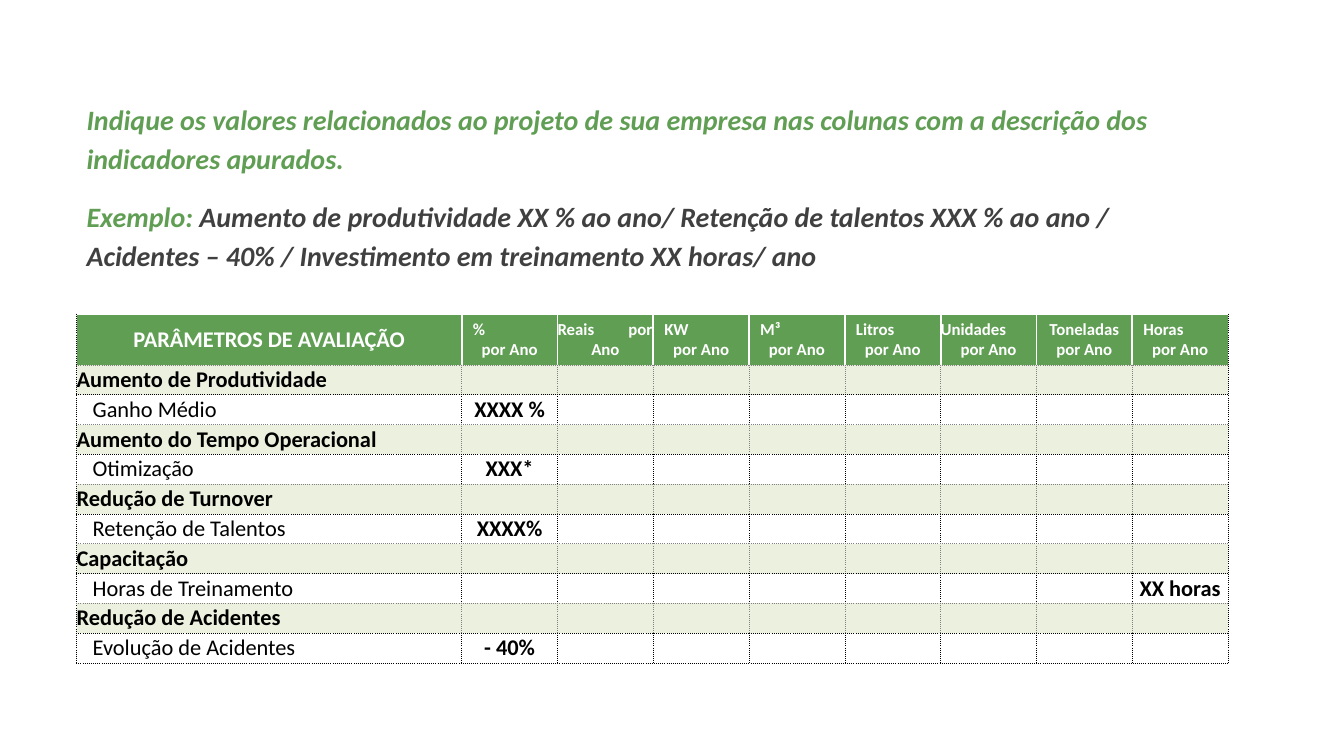
from dataclasses import dataclass

from lxml import etree
from pptx import Presentation
from pptx.dml.color import RGBColor
from pptx.enum.text import MSO_ANCHOR, PP_ALIGN
from pptx.oxml.ns import qn
from pptx.util import Inches, Pt

LEFT, CENTER = PP_ALIGN.LEFT, PP_ALIGN.CENTER
MIDDLE = MSO_ANCHOR.MIDDLE


@dataclass(frozen=True)
class Theme:
    font: str = "Calibri"
    green: str = "609E54"
    pale: str = "EBF1DE"
    white: str = "FFFFFF"
    black: str = "000000"
    gray: str = "808080"
    dark: str = "404040"
    intro: int = 20
    body: int = 16
    unit: int = 12


@dataclass(frozen=True)
class Edge:
    color: str
    width: float = 0.5
    dash: str = "dot"


@dataclass(frozen=True)
class Unit:
    first: str
    second: str = "por Ano"
    indent: float = 0.11
    align: PP_ALIGN = LEFT


@dataclass(frozen=True)
class Parameter:
    section: str
    item: str
    value: str
    col: int = 1


T = Theme()
WHITE_EDGE = Edge(T.white, 1.5, "solid")
BLACK_EDGE, GRAY_EDGE = Edge(T.black), Edge(T.gray)

X, WIDTH = 0.76, 11.42
TABLE_Y, TABLE_H, HEADER_H = 3.12, 3.46, 0.5
UNIT_W = 0.95
HEADING = "PARÂMETROS DE AVALIAÇÃO"
UNITS = [
    Unit("%"),
    Unit("Reais\tpor", "Ano", 0),
    Unit("KW"),
    Unit("M³"),
    Unit("Litros"),
    Unit("Unidades", indent=0),
    Unit("Toneladas", indent=0, align=CENTER),
    Unit("Horas"),
]
PARAMETERS = [
    Parameter("Aumento de Produtividade", "Ganho Médio", "XXXX %"),
    Parameter("Aumento do Tempo Operacional", "Otimização", "XXX*"),
    Parameter("Redução de Turnover", "Retenção de Talentos", "XXXX%"),
    Parameter("Capacitação", "Horas de Treinamento", "XX horas", len(UNITS)),
    Parameter("Redução de Acidentes", "Evolução de Acidentes", "- 40%"),
]
INTRO = [
    [("Indique os valores relacionados ao projeto de sua empresa nas colunas "
      "com a descrição dos indicadores apurados.", T.green)],
    [("Exemplo: ", T.green),
     ("Aumento de produtividade XX % ao ano/ Retenção de talentos XXX % ao ano / "
      "Acidentes – 40% / Investimento em treinamento XX horas/ ano", T.dark)],
]
ROWS, COLS = 1 + 2 * len(PARAMETERS), 1 + len(UNITS)


def add_run(p, text: str, size: int, color: str, bold: bool = True, italic: bool = False) -> None:
    r = p.add_run()
    r.text = text
    for name, value in {"name": T.font, "size": Pt(size), "bold": bold, "italic": italic}.items():
        setattr(r.font, name, value)
    r.font.color.rgb = RGBColor.from_string(color)


def add_intro(s) -> None:
    tf = s.shapes.add_textbox(Inches(X), Inches(0.92), Inches(WIDTH), Inches(1.81)).text_frame
    tf.word_wrap = True
    for i, runs in enumerate(INTRO):
        p = tf.add_paragraph() if i else tf.paragraphs[0]
        p.line_spacing, p.space_after = 1.15, Pt(4)
        p.space_before = Pt(10 if i else 0)
        for text, color in runs:
            add_run(p, text, T.intro, color, italic=True)


def row_edge(row: int) -> Edge:
    if row == 0:
        return WHITE_EDGE
    return GRAY_EDGE if row % 2 and row < ROWS else BLACK_EDGE


def col_edge(row: int, col: int) -> Edge:
    if col in (0, COLS):
        return BLACK_EDGE
    if row == 0:
        return WHITE_EDGE
    return GRAY_EDGE if row % 2 else BLACK_EDGE


def set_borders(cell, edges: list[Edge]) -> None:
    tc_pr = cell._tc.get_or_add_tcPr()
    for i, (side, edge) in enumerate(zip("LRTB", edges)):
        ln = etree.Element(qn(f"a:ln{side}"), w=str(Pt(edge.width)))
        fill = etree.SubElement(ln, qn("a:solidFill"))
        etree.SubElement(fill, qn("a:srgbClr"), val=edge.color)
        etree.SubElement(ln, qn("a:prstDash"), val=edge.dash)
        tc_pr.insert(i, ln)


def format_cell(cell, row: int, col: int) -> None:
    margins = dict.fromkeys(("margin_left", "margin_right", "margin_top", "margin_bottom"), 0)
    for name, value in {**margins, "vertical_anchor": MIDDLE}.items():
        setattr(cell, name, value)
    color = T.green if row == 0 else T.pale if row % 2 else T.white
    cell.fill.solid()
    cell.fill.fore_color.rgb = RGBColor.from_string(color)
    set_borders(cell, [col_edge(row, col), col_edge(row, col + 1), row_edge(row), row_edge(row + 1)])
    end = etree.SubElement(cell.text_frame.paragraphs[0]._p, qn("a:endParaRPr"))
    end.set("sz", str(T.body * 100))


def write_cell(cell, text: str, color: str = T.black, bold: bool = True, align: PP_ALIGN = LEFT) -> None:
    p = cell.text_frame.paragraphs[0]
    p.alignment = align
    add_run(p, text, T.body, color, bold)


def write_unit(cell, unit: Unit) -> None:
    tf = cell.text_frame
    p = tf.paragraphs[0]
    p.alignment = unit.align
    p_pr = p._p.get_or_add_pPr()
    p_pr.set("marL", str(Inches(unit.indent)))
    if "\t" in unit.first:
        tabs = etree.SubElement(p_pr, qn("a:tabLst"))
        etree.SubElement(tabs, qn("a:tab"), pos=str(Inches(UNIT_W - 0.01)), algn="r")
    add_run(p, unit.first, T.unit, T.white)
    p = tf.add_paragraph()
    p.alignment = CENTER
    add_run(p, unit.second, T.unit, T.white)


def add_indicators(s) -> None:
    frame = s.shapes.add_table(ROWS, COLS, Inches(X), Inches(TABLE_Y), Inches(WIDTH), Inches(TABLE_H))
    table = frame.table
    table.first_row = table.horz_banding = False
    for i, column in enumerate(table.columns):
        column.width = Inches(UNIT_W if i else WIDTH - UNIT_W * len(UNITS))
    for i, row in enumerate(table.rows):
        row.height = Inches((TABLE_H - HEADER_H) / (ROWS - 1) if i else HEADER_H)
    for row in range(ROWS):
        for col in range(COLS):
            format_cell(table.cell(row, col), row, col)
    write_cell(table.cell(0, 0), HEADING, T.white, align=CENTER)
    for col, unit in enumerate(UNITS, 1):
        write_unit(table.cell(0, col), unit)
    for i, parameter in enumerate(PARAMETERS):
        row = 1 + 2 * i
        write_cell(table.cell(row, 0), parameter.section)
        item = table.cell(row + 1, 0)
        item.margin_left = Inches(0.16)
        write_cell(item, parameter.item, bold=False)
        write_cell(table.cell(row + 1, parameter.col), parameter.value, align=CENTER)


def main() -> None:
    prs = Presentation()
    prs.slide_width, prs.slide_height = Inches(13.33), Inches(7.5)
    s = prs.slides.add_slide(prs.slide_layouts[6])
    add_indicators(s)
    add_intro(s)
    prs.save("out.pptx")


if __name__ == "__main__":
    main()
